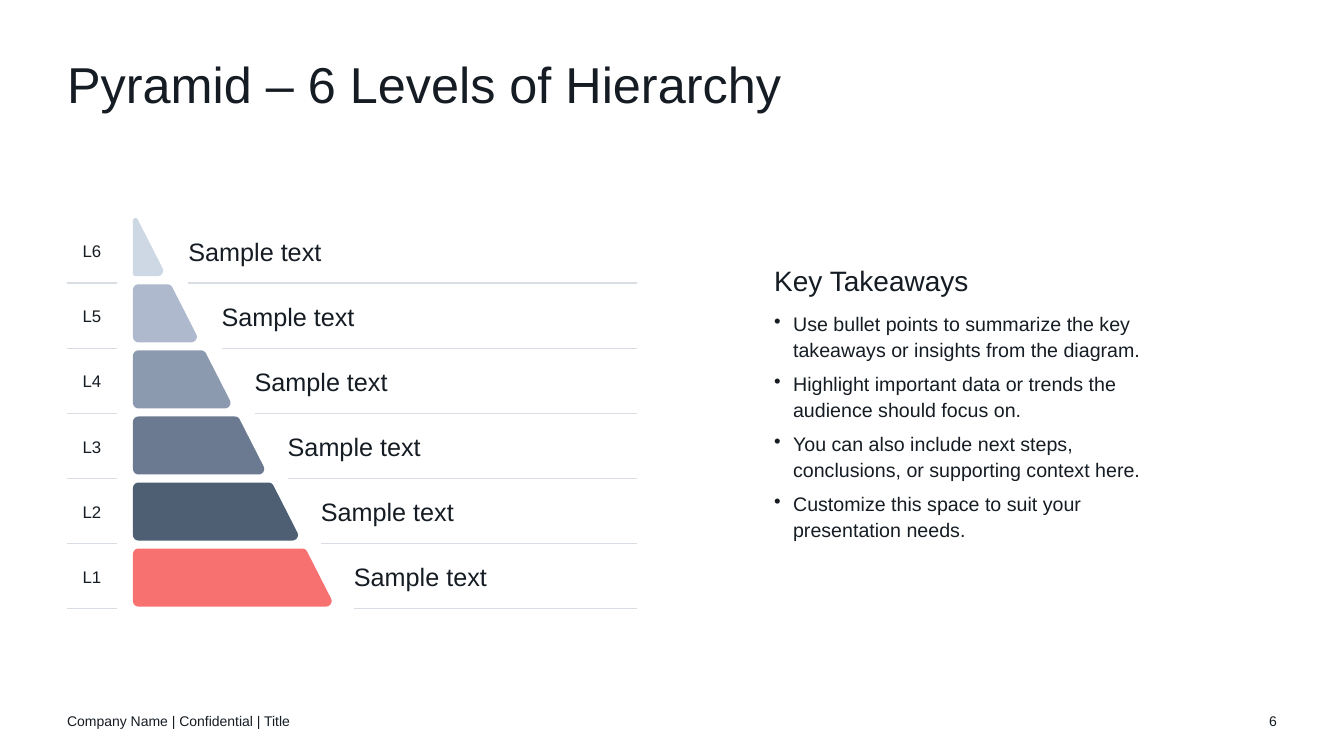
import math

import pptx
import pptx.dml.color
import pptx.enum.shapes
import pptx.enum.text
import pptx.oxml
import pptx.oxml.ns
import pptx.util
from lxml import etree

Pt = pptx.util.Pt
RGBColor = pptx.dml.color.RGBColor
ALIGN = pptx.enum.text.PP_ALIGN
ANCHOR = pptx.enum.text.MSO_ANCHOR

INK = RGBColor(0x15, 0x1C, 0x23)
RULE = RGBColor(0xD9, 0xDE, 0xE5)
LEVEL_COLORS = [
    RGBColor(0xCE, 0xD8, 0xE4),
    RGBColor(0xAF, 0xB9, 0xCD),
    RGBColor(0x8C, 0x9A, 0xB0),
    RGBColor(0x6B, 0x7A, 0x90),
    RGBColor(0x4E, 0x5E, 0x73),
    RGBColor(0xF8, 0x71, 0x71),
]
TAKEAWAYS = [
    "Use bullet points to summarize the key takeaways or insights from the diagram.",
    "Highlight important data or trends the audience should focus on.",
    "You can also include next steps, conclusions, or supporting context here.",
    "Customize this space to suit your presentation needs.",
]

ROW_PITCH = 46.5
FIRST_RULE = 202.3
RULE_RIGHT = 455
TEXT_LEFT, TEXT_STEP = 134.6, 23.65

PYRAMID_LEFT, APEX_TOP = 95, 150.1
PYRAMID_SLOPE = 0.51
BAND_TOP, BAND_PITCH, BAND_HEIGHT = 155.9, 47.2, 41.4
CORNER_RADIUS = 4


def fillet(before, corner, after, radius, steps=8):
    """Return points of the arc that rounds a corner between its two neighbours."""
    x, y = corner
    toward_before = math.atan2(before[1] - y, before[0] - x)
    toward_after = math.atan2(after[1] - y, after[0] - x)
    opening = math.remainder(toward_after - toward_before, math.tau)
    bisector = toward_before + opening / 2
    distance = radius / math.sin(abs(opening) / 2)
    center_x = x + distance * math.cos(bisector)
    center_y = y + distance * math.sin(bisector)
    sweep = math.pi - abs(opening)
    turn = math.copysign(sweep, -opening)
    middle = bisector + math.pi
    angles = [middle + turn * (step / steps - 0.5) for step in range(steps + 1)]
    return [
        (center_x + radius * math.cos(angle), center_y + radius * math.sin(angle))
        for angle in angles
    ]


class SlideBuilder:
    font_name = "Arial"
    ink = INK

    def __init__(self, slide):
        self.slide = slide

    def text(self, left, top, width, height, content, size,
             align=ALIGN.LEFT, anchor=ANCHOR.MIDDLE):
        """Add a text box without insets and return its text frame."""
        box = self.slide.shapes.add_textbox(Pt(left), Pt(top), Pt(width), Pt(height))
        frame = box.text_frame
        frame.word_wrap = True
        frame.vertical_anchor = anchor
        frame.margin_left = frame.margin_right = 0
        frame.margin_top = frame.margin_bottom = 0
        self.fill_paragraph(frame.paragraphs[0], content, size, align)
        return frame

    def fill_paragraph(self, paragraph, content, size, align=ALIGN.LEFT):
        paragraph.text = content
        paragraph.alignment = align
        paragraph.font.name = self.font_name
        paragraph.font.size = Pt(size)
        paragraph.font.color.rgb = self.ink

    def bullet(self, frame, content, size, indent):
        paragraph = frame.add_paragraph()
        self.fill_paragraph(paragraph, content, size)
        paragraph.line_spacing = 1.1
        paragraph.space_before = Pt(6)
        properties = paragraph._p.get_or_add_pPr()
        properties.set("marL", str(Pt(indent)))
        properties.set("indent", str(-Pt(indent)))
        mark = etree.Element(pptx.oxml.ns.qn("a:buChar"), char="•")
        properties.insert_element_before(mark, "a:tabLst", "a:defRPr", "a:extLst")

    def rule(self, left, right, y):
        line = self.slide.shapes.add_connector(
            pptx.enum.shapes.MSO_CONNECTOR.STRAIGHT, Pt(left), Pt(y), Pt(right), Pt(y))
        line.line.color.rgb = RULE
        line.line.width = Pt(1)
        etree.SubElement(line._element.spPr, pptx.oxml.ns.qn("a:effectLst"))

    def rounded_polygon(self, corners, color):
        """Draw a polygon from (x, y, radius) corners."""
        points = []
        for index, (x, y, radius) in enumerate(corners):
            before = corners[index - 1]
            after = corners[(index + 1) % len(corners)]
            points += fillet(before, (x, y), after, radius)
        outline = [(Pt(x), Pt(y)) for x, y in points]
        builder = self.slide.shapes.build_freeform(*outline[0])
        builder.add_line_segments(outline[1:], close=True)
        shape = builder.convert_to_shape()
        shape.shadow.inherit = False
        shape.fill.solid()
        shape.fill.fore_color.rgb = color
        shape.line.fill.background()


def pyramid_edge(y):
    return PYRAMID_LEFT + PYRAMID_SLOPE * (y - APEX_TOP)


def band_corners(index):
    top = BAND_TOP + index * BAND_PITCH
    bottom = top + BAND_HEIGHT
    lower_right = (pyramid_edge(bottom), bottom, CORNER_RADIUS)
    if index == 0:
        return [(PYRAMID_LEFT, APEX_TOP, 1.8), lower_right, (PYRAMID_LEFT, bottom, 2)]
    return [
        (PYRAMID_LEFT, top, CORNER_RADIUS),
        (pyramid_edge(top), top, CORNER_RADIUS),
        lower_right,
        (PYRAMID_LEFT, bottom, CORNER_RADIUS),
    ]


def main():
    presentation = pptx.Presentation()
    presentation.slide_width = Pt(960)
    presentation.slide_height = Pt(540)
    slide = presentation.slides.add_slide(presentation.slide_layouts[6])
    builder = SlideBuilder(slide)

    title = builder.text(48, 43.2, 864, 43.2, "Pyramid – 6 Levels of Hierarchy", 36,
                         anchor=ANCHOR.TOP)
    title.paragraphs[0].line_spacing = 0.9

    for index, color in enumerate(LEVEL_COLORS):
        rule_y = FIRST_RULE + index * ROW_PITCH
        text_left = TEXT_LEFT + index * TEXT_STEP
        text_top = rule_y - 33.9
        level = len(LEVEL_COLORS) - index
        builder.rule(47.8, 83.8, rule_y)
        builder.rule(text_left, RULE_RIGHT, rule_y)
        builder.text(51.3, text_top, 28.8, 21.8, f"L{level}", 12, ALIGN.CENTER)
        builder.text(text_left, text_top, 201.6, 21.8, "Sample text", 18)
        builder.rounded_polygon(band_corners(index), color)

    takeaways = builder.text(553, 129.6, 287.3, 313.2, "Key Takeaways", 20)
    heading = takeaways.paragraphs[0]
    heading.line_spacing = 1.1
    heading.space_before = Pt(6)
    heading.space_after = Pt(3)
    for takeaway in TAKEAWAYS:
        builder.bullet(takeaways, takeaway, 14, indent=13.5)

    builder.text(48, 500.4, 324, 28.8, "Company Name | Confidential | Title", 10)
    builder.text(876, 500.4, 36, 28.8, "6", 10, ALIGN.RIGHT)
    presentation.save("out.pptx")


if __name__ == "__main__":
    main()
